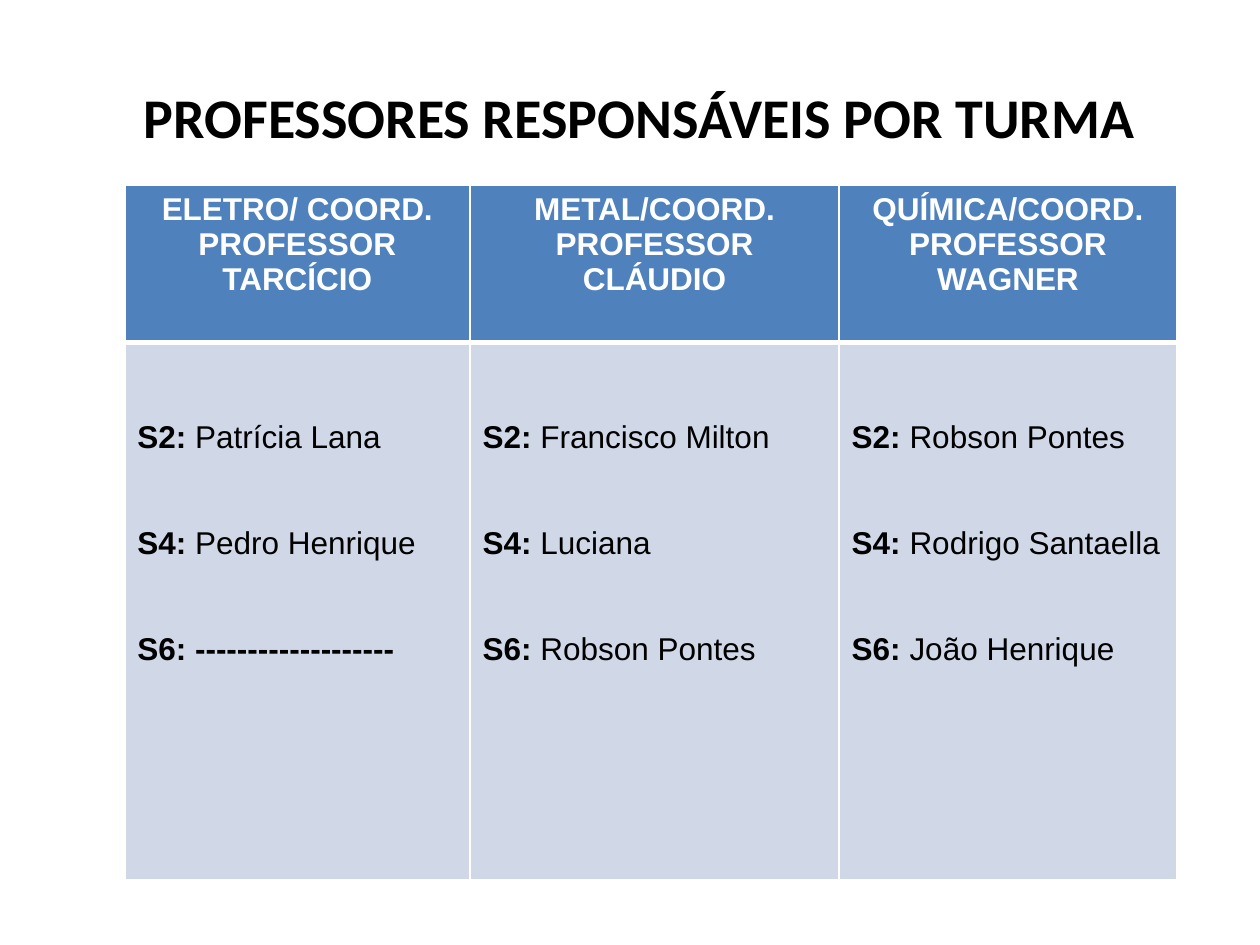
import dataclasses

import lxml.etree
import pptx
import pptx.dml.color
import pptx.enum.text
import pptx.oxml.ns
import pptx.util

Inches = pptx.util.Inches
Pt = pptx.util.Pt
ALIGN = pptx.enum.text.PP_ALIGN
ANCHOR = pptx.enum.text.MSO_ANCHOR


@dataclasses.dataclass(frozen=True)
class Theme:
    title_font: str = "Calibri"
    table_font: str = "Arial"
    title_size: int = 32
    table_size: int = 18
    text: str = "000000"
    white: str = "FFFFFF"
    header_fill: str = "4F81BD"
    body_fill: str = "D0D8E8"
    thin_line: int = 1
    thick_line: int = 3


THEME = Theme()
COLUMN_WIDTHS = (2.74, 2.93, 2.68)
ROW_HEIGHTS = (1.25, 4.26)
SEMESTERS = ("S2", "S4", "S6")
NO_TEACHER = "-------------------"
COURSES = (
    ("ELETRO/ COORD.", "PROFESSOR TARCÍCIO",
     ("Patrícia Lana", "Pedro Henrique", NO_TEACHER)),
    ("METAL/COORD.", "PROFESSOR CLÁUDIO",
     ("Francisco Milton", "Luciana", "Robson Pontes")),
    ("QUÍMICA/COORD.", "PROFESSOR WAGNER",
     ("Robson Pontes", "Rodrigo Santaella", "João Henrique")),
)


def rgb(color):
    return pptx.dml.color.RGBColor.from_string(color)


def set_font(font, name, size, color, bold=None):
    font.name = name
    font.size = Pt(size)
    font.color.rgb = rgb(color)
    font.bold = bold


def add_title(slide, text):
    shape = slide.shapes.add_textbox(Inches(0.5), Inches(0.3), Inches(9.15), Inches(1.25))
    frame = shape.text_frame
    frame.word_wrap = True
    frame.vertical_anchor = ANCHOR.MIDDLE
    frame.margin_left = frame.margin_right = frame.margin_top = frame.margin_bottom = 0
    paragraph = frame.paragraphs[0]
    paragraph.text = text
    paragraph.alignment = ALIGN.CENTER
    set_font(paragraph.font, THEME.title_font, THEME.title_size, THEME.text, True)


def style_cell(cell, fill, top, bottom):
    """Fill the cell and draw white borders, with top and bottom widths in points."""
    cell.fill.solid()
    cell.fill.fore_color.rgb = rgb(fill)
    properties = cell._tc.get_or_add_tcPr()
    edges = (("L", THEME.thin_line), ("R", THEME.thin_line), ("T", top), ("B", bottom))
    qn = pptx.oxml.ns.qn
    for index, (side, width) in enumerate(edges):
        line = lxml.etree.Element(qn(f"a:ln{side}"), w=str(int(Pt(width))))
        solid = lxml.etree.SubElement(line, qn("a:solidFill"))
        lxml.etree.SubElement(solid, qn("a:srgbClr"), val=THEME.white)
        properties.insert(index, line)


def fill_header(cell, lines):
    style_cell(cell, THEME.header_fill, THEME.thin_line, THEME.thick_line)
    cell.text = "\n".join(lines)
    for paragraph in cell.text_frame.paragraphs:
        paragraph.alignment = ALIGN.CENTER
        set_font(paragraph.font, THEME.table_font, THEME.table_size, THEME.white, True)


def fill_teachers(cell, teachers):
    style_cell(cell, THEME.body_fill, THEME.thick_line, THEME.thin_line)
    cell.margin_top = Inches(0.61)
    frame = cell.text_frame
    for index, (semester, teacher) in enumerate(zip(SEMESTERS, teachers)):
        paragraph = frame.add_paragraph() if index else frame.paragraphs[0]
        paragraph.space_after = Pt(40.4)
        set_font(paragraph.font, THEME.table_font, THEME.table_size, THEME.text)
        for text, bold in ((f"{semester}: ", True), (teacher, teacher == NO_TEACHER)):
            run = paragraph.add_run()
            run.text = text
            run.font.bold = bold


def add_course_table(slide):
    table = slide.shapes.add_table(
        len(ROW_HEIGHTS), len(COURSES), Inches(0.99), Inches(1.47),
        Inches(sum(COLUMN_WIDTHS)), Inches(sum(ROW_HEIGHTS))).table
    table.horz_banding = False
    for row, height in zip(table.rows, ROW_HEIGHTS):
        row.height = Inches(height)
    for index, (course, coordinator, teachers) in enumerate(COURSES):
        table.columns[index].width = Inches(COLUMN_WIDTHS[index])
        fill_header(table.cell(0, index), (course, coordinator))
        fill_teachers(table.cell(1, index), teachers)


def main():
    presentation = pptx.Presentation()
    presentation.slide_width = Inches(10)
    presentation.slide_height = Inches(7.5)
    slide = presentation.slides.add_slide(presentation.slide_layouts[6])
    add_title(slide, "PROFESSORES RESPONSÁVEIS POR TURMA")
    add_course_table(slide)
    presentation.save("out.pptx")


if __name__ == "__main__":
    main()
